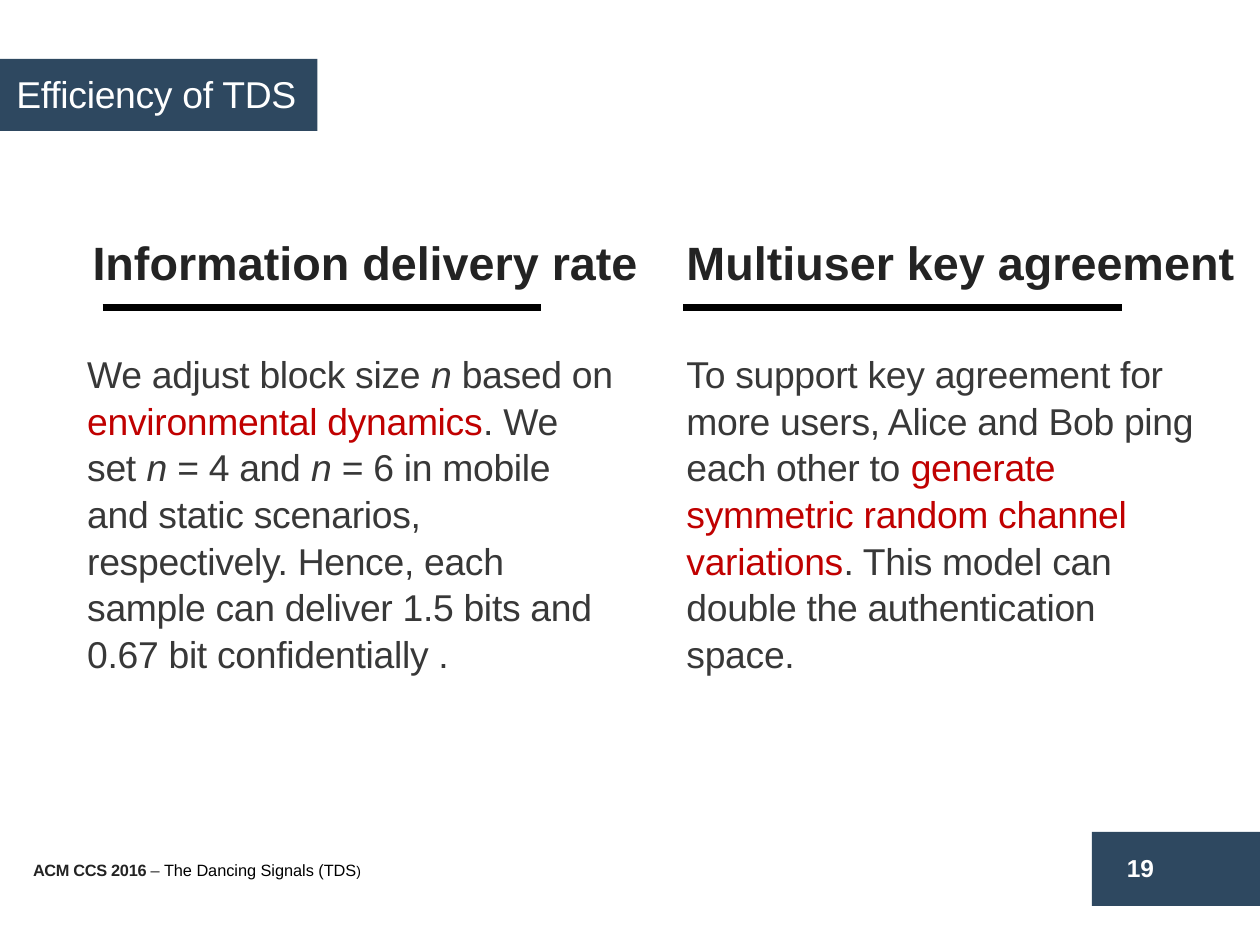
import pptx
import pptx.dml.color
import pptx.enum.shapes
import pptx.enum.text
import pptx.oxml.ns
import pptx.util
from lxml import etree

Cm = pptx.util.Cm
Pt = pptx.util.Pt
FONT = "Arial"
COLORS = {
    "navy": "2E4860",
    "white": "FFFFFF",
    "heading": "232323",
    "body": "383838",
    "accent": "C00000",
    "black": "000000",
}


def color(name):
    return pptx.dml.color.RGBColor.from_string(COLORS[name])


def add_span(para, text, size=16, ink="body", bold=False, italic=False, tracking=0):
    span = para.add_run()
    span.text = text
    span.font.name = FONT
    span.font.size = Pt(size)
    span.font.bold = bold
    span.font.italic = italic
    span.font.color.rgb = color(ink)
    if tracking:
        span.font._element.set("spc", str(tracking))


def add_text(page, left, top, width, height, spans, line_spacing=None, **style):
    box = page.shapes.add_textbox(Cm(left), Cm(top), Cm(width), Cm(height))
    box.text_frame.word_wrap = True
    box.text_frame.auto_size = pptx.enum.text.MSO_AUTO_SIZE.SHAPE_TO_FIT_TEXT
    para = box.text_frame.paragraphs[0]
    if line_spacing:
        para.line_spacing = line_spacing
    for text, changes in spans:
        add_span(para, text, **{**style, **changes})


def add_block(page, left, top, width, height):
    block = page.shapes.add_shape(
        pptx.enum.shapes.MSO_SHAPE.RECTANGLE, Cm(left), Cm(top), Cm(width), Cm(height))
    block.shadow.inherit = False
    block.fill.solid()
    block.fill.fore_color.rgb = color("navy")
    block.line.fill.background()


def add_rule(page, left, top, width):
    rule = page.shapes.add_connector(
        pptx.enum.shapes.MSO_CONNECTOR.STRAIGHT, Cm(left), Cm(top), Cm(left + width), Cm(top))
    rule.line.color.rgb = color("black")
    rule.line.width = Pt(3)
    etree.SubElement(rule._element.spPr, pptx.oxml.ns.qn("a:effectLst"))


def add_title(page, left, top, width, height, text):
    add_block(page, left, top, width, height)
    add_text(page, left, top + 0.03, width, 0.94, [(text, {})],
             line_spacing=1.04, ink="white", tracking=-10)


def add_column(page, left, top, width, heading, spans, heading_shift=0, rule_shift=0.2):
    add_text(page, left + heading_shift, top, 9.2, 1.12, [(heading, {})],
             line_spacing=1.04, size=20, ink="heading", bold=True)
    add_rule(page, left + rule_shift, top + 1.27, 6.63)
    add_text(page, left, top + 1.78, width, 5.05, spans, line_spacing=1.04, tracking=-10)


def add_footer(page, left, top, width, height, number):
    add_text(page, 0.25, top + 0.3, 6.15, 0.56, [
        ("ACM CCS 2016 ", {"ink": "heading", "bold": True, "tracking": -10}),
        ("– ", {"ink": "heading", "tracking": -10}),
        ("The Dancing Signals (TDS", {}),
        (")", {"size": 6}),
    ], size=7, ink="black")
    add_block(page, left, top, width, height)
    add_text(page, left + 0.28, top + 0.2, 0.97, 0.71, [(number, {})],
             size=10.5, ink="white", bold=True)


def build_page(deck):
    page = deck.slides.add_slide(deck.slide_layouts[6])
    variable = {"italic": True}
    accent = {"ink": "accent"}
    add_title(page, 0, 0.89, 4.8, 1.09, "Efficiency of TDS")
    add_column(page, 1.07, 3.38, 8.46, "Information delivery rate", [
        ("We adjust block size ", {}),
        ("n", variable),
        (" based on ", {}),
        ("environmental dynamics", accent),
        (". We set ", {}),
        ("n ", variable),
        ("= 4 and ", {}),
        ("n", variable),
        (" = 6 in mobile and static scenarios, respectively. Hence, each sample "
         "can deliver 1.5 bits and 0.67 bit confidentially .", {}),
    ], heading_shift=0.08, rule_shift=0.48)
    add_column(page, 10.13, 3.38, 8.38, "Multiuser key agreement", [
        ("To support key agreement for more users, Alice and Bob ping each other to ", {}),
        ("generate symmetric random channel variations", accent),
        (". This model can double the authentication space.", {}),
    ])
    add_footer(page, 16.51, 12.57, 2.54, 1.12, "19")


def main():
    deck = pptx.Presentation()
    deck.slide_width = Cm(19.05)
    deck.slide_height = Cm(14.28)
    build_page(deck)
    deck.save("out.pptx")


if __name__ == "__main__":
    main()
